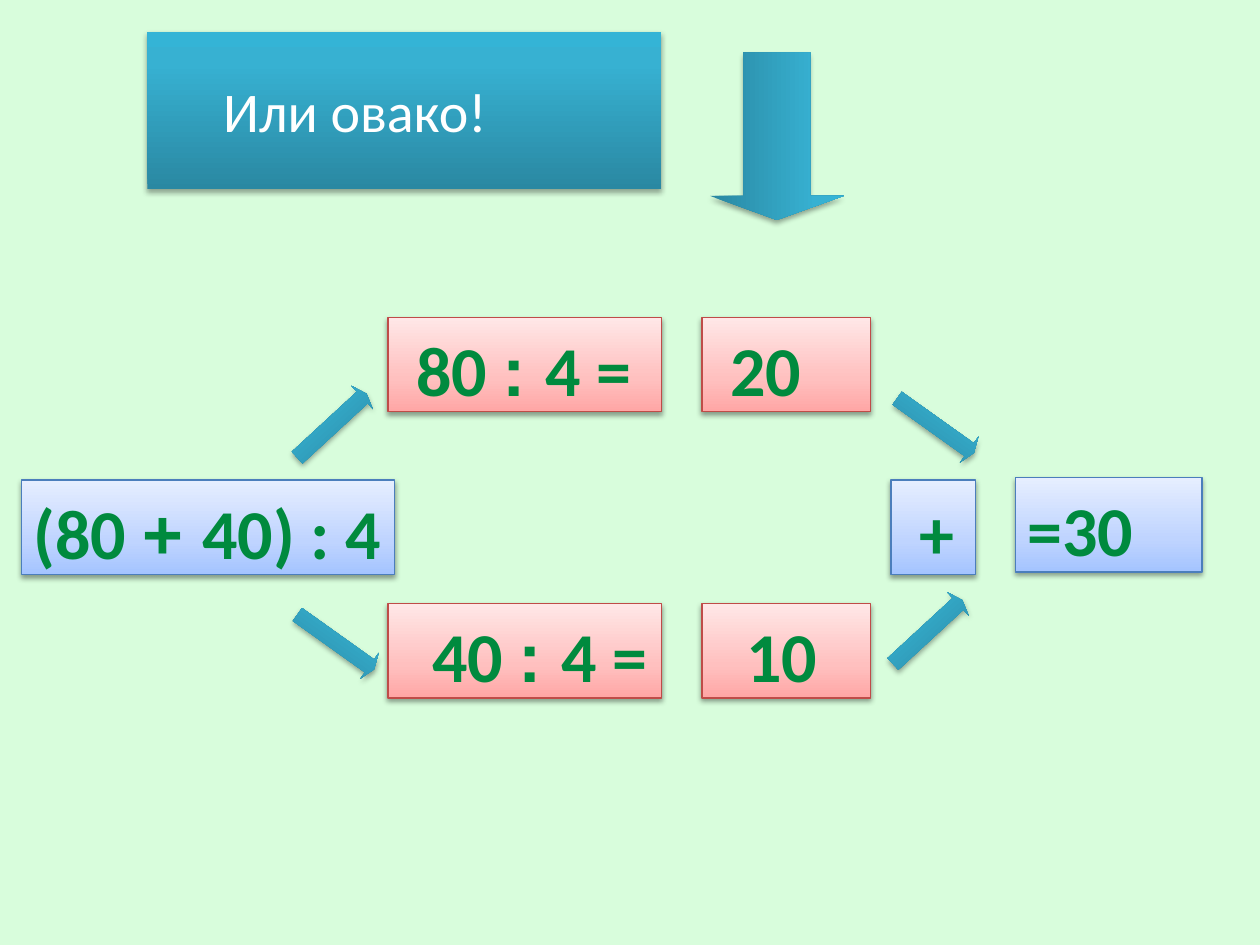
from lxml.etree import SubElement
from pptx import Presentation
from pptx.dml.color import RGBColor
from pptx.enum.shapes import MSO_SHAPE
from pptx.enum.text import MSO_ANCHOR, PP_ALIGN
from pptx.oxml.ns import qn
from pptx.util import Cm, Pt

MINT = RGBColor(0xD8, 0xFD, 0xDC)
GREEN = RGBColor(0x00, 0x8A, 0x3E)
WHITE = RGBColor(0xFF, 0xFF, 0xFF)
BLUE_LINE = RGBColor(0x4B, 0x7E, 0xBC)
RED_LINE = RGBColor(0xBF, 0x4C, 0x48)

# Gradient stops (percent, colour), outline, shadow opacity and distance
BLUE = ([(0, "A4C4FF"), (35, "BFD4FF"), (100, "E6EEFF")], BLUE_LINE, 38, 1.6)
RED = ([(0, "FFA6A5"), (35, "FFC0BF"), (100, "FFE7E7")], RED_LINE, 38, 1.6)
TEAL = ([(0, "2A88A2"), (80, "37B1D2"), (100, "34B4D6")], None, 35, 1.8)

# Grid of the calculation, in cm
BOX_H = 1.9
TOP_ROW, MIDDLE_ROW, BOTTOM_ROW = 6.4, 9.68, 12.17
DIVISION, QUOTIENT = (7.82, 5.51), (14.15, 3.4)  # left, width
INSET, SPACE = 0.25, 0.32
UP, DOWN = 317.3, 35.5

# (left, width), top, style, indent in spaces, [(text, font)]
steps = [
    ((0.43, 7.52), MIDDLE_ROW, BLUE, 0,
     [("(80 ", "Calibri"), ("+ ", "Arial"), ("40) : 4", "Calibri")]),
    (DIVISION, TOP_ROW, RED, 1,
     [("80 ", "Calibri"), (": ", "Arial"), ("4 =", "Calibri")]),
    (DIVISION, BOTTOM_ROW, RED, 2,
     [("40 ", "Calibri"), (": ", "Arial"), ("4 =", "Calibri")]),
    (QUOTIENT, TOP_ROW, RED, 1, [("20", "Calibri")]),
    (QUOTIENT, BOTTOM_ROW, RED, 2, [("10", "Calibri")]),
    ((17.96, 1.7), MIDDLE_ROW, BLUE, 1, [("+", "Calibri")]),
    ((20.47, 3.76), 9.63, BLUE, 0, [("=30", "Calibri")]),
]

# left, top, width, height, rotation
arrows = [(13.97, 1.4, 3.38, 2.69, 90)] + [
    (left, top, 1.9, 0.64, turn) for left, top, turn in [
        (5.74, 8.26, UP), (5.82, 12.62, DOWN),
        (17.91, 8.26, DOWN), (17.75, 12.42, UP)]]


def add_color(parent, value):
    color = SubElement(parent, qn("a:srgbClr"))
    color.set("val", value)
    return color


def add_styled(kind, left, top, width, height, style):
    stops, outline, opacity, distance = style
    shape = slide.shapes.add_shape(kind, Cm(left), Cm(top), Cm(width), Cm(height))
    # Three-stop gradient running from the bottom up
    shape.fill.gradient()
    shape.fill.gradient_angle = 90
    properties = shape.element.spPr
    stop_list = properties.find(".//" + qn("a:gsLst"))
    for old_stop in list(stop_list):
        stop_list.remove(old_stop)
    for percent, value in stops:
        stop = SubElement(stop_list, qn("a:gs"))
        stop.set("pos", str(percent * 1000))
        add_color(stop, value)
    # Outline
    if outline is None:
        shape.line.fill.background()
    else:
        shape.line.color.rgb = outline
        shape.line.width = Pt(0.75)
    # Soft shadow below
    shape.shadow.inherit = False
    shadow = SubElement(properties.find(qn("a:effectLst")), qn("a:outerShdw"))
    for key, value in [("blurRad", Pt(3.1)), ("dist", Pt(distance)),
                       ("dir", 90 * 60000), ("rotWithShape", 0)]:
        shadow.set(key, str(int(value)))
    alpha = SubElement(add_color(shadow, "000000"), qn("a:alpha"))
    alpha.set("val", str(opacity * 1000))
    return shape


def write(shape, runs, size, color, bold, indent, anchor):
    frame = shape.text_frame
    frame.word_wrap = True
    frame.vertical_anchor = anchor
    frame.margin_left = Cm(INSET + indent)
    frame.margin_right = frame.margin_bottom = Cm(0)
    frame.margin_top = Cm(0.18 if anchor == MSO_ANCHOR.TOP else 0)
    paragraph = frame.paragraphs[0]
    paragraph.alignment = PP_ALIGN.LEFT
    for text, font in runs:
        run = paragraph.add_run()
        run.text = text
        run.font.name = font
        run.font.size = Pt(size)
        run.font.bold = bold
        run.font.color.rgb = color


presentation = Presentation()
presentation.slide_width, presentation.slide_height = Cm(25.4), Cm(19.05)
slide = presentation.slides.add_slide(presentation.slide_layouts[6])
slide.background.fill.solid()
slide.background.fill.fore_color.rgb = MINT

# Title
title = add_styled(MSO_SHAPE.RECTANGLE, 2.97, 0.64, 10.36, 3.18, TEAL)
write(title, [("Или овако!", "Calibri")], 32, WHITE, False, 1.28, MSO_ANCHOR.MIDDLE)

# Steps of the calculation
for (left, width), top, style, spaces, runs in steps:
    step = add_styled(MSO_SHAPE.RECTANGLE, left, top, width, BOX_H, style)
    write(step, runs, 40, GREEN, True, spaces * SPACE, MSO_ANCHOR.TOP)

# Arrows between the steps
for left, top, width, height, turn in arrows:
    arrow = add_styled(MSO_SHAPE.RIGHT_ARROW, left, top, width, height, TEAL)
    arrow.adjustments[1] = 0.18
    arrow.rotation = turn

presentation.save("out.pptx")
